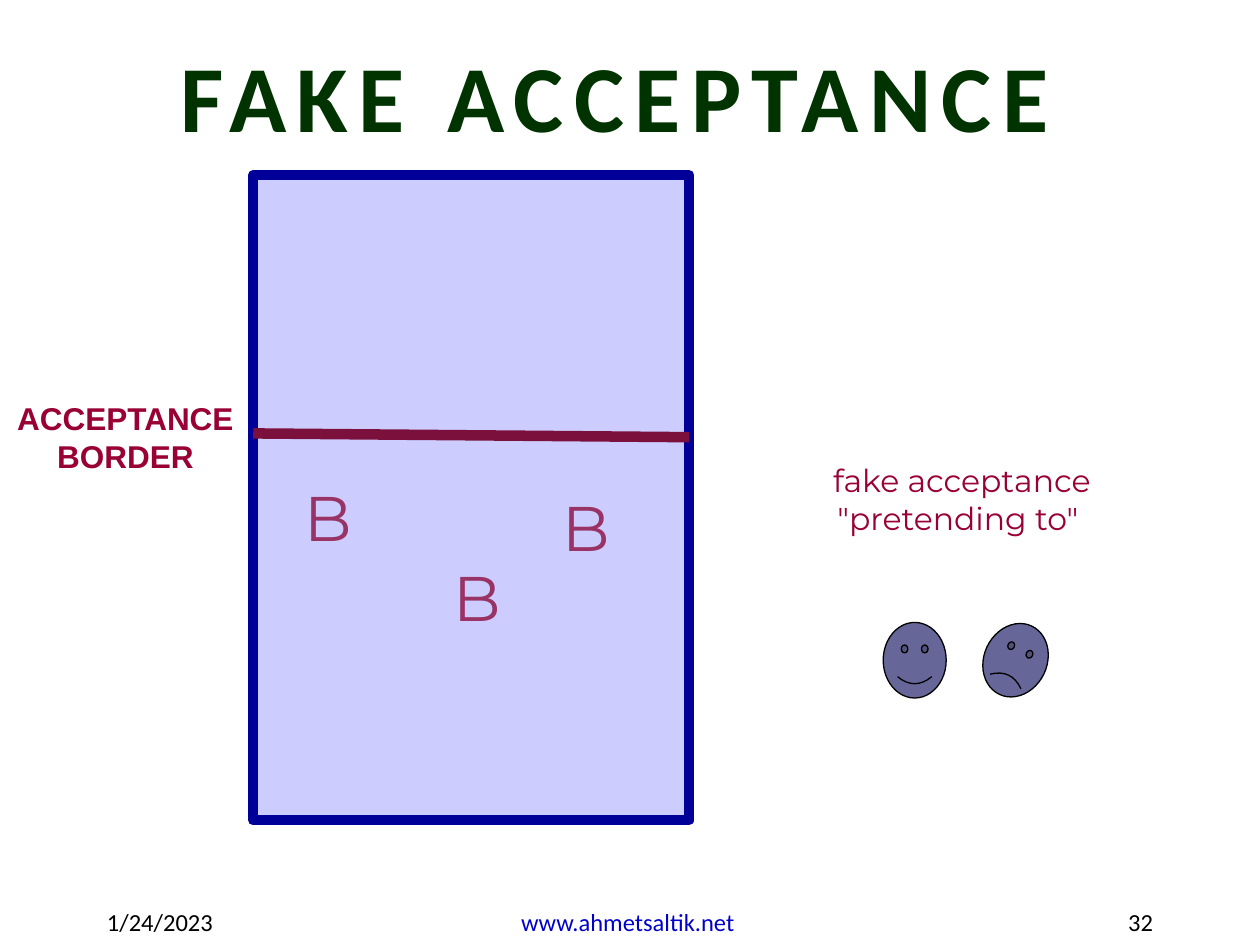
from lxml import etree
from pptx import Presentation
from pptx.dml.color import RGBColor
from pptx.enum.shapes import MSO_CONNECTOR as CONN, MSO_SHAPE as SHAPE
from pptx.enum.text import MSO_ANCHOR as ANCHOR, MSO_AUTO_SIZE as AUTO, PP_ALIGN as ALIGN
from pptx.oxml.ns import qn
from pptx.util import Inches, Pt

COLORS = {
    "title": "003300", "face": "666699", "black": "000000", "accent": "990033",
    "panel": "CCCCFF", "frame": "000099", "border": "7A103B",
    "letter": "993366", "link": "0000CC",
}


def rgb(name):
    return RGBColor.from_string(COLORS[name])


class SlideBuilder:
    def __init__(self, slide):
        self.s = slide

    def add_lines(self, tf, lines, font, size, color, align=ALIGN.CENTER,
                  bold=False, outline=None, spacing=None):
        for i, line in enumerate(lines):
            p = tf.add_paragraph() if i else tf.paragraphs[0]
            p.alignment = align
            r = p.add_run()
            r.text = line
            r.font.name, r.font.size, r.font.bold = font, Pt(size), bold
            r.font.color.rgb = rgb(color)
            rpr = r._r.get_or_add_rPr()
            if spacing:
                rpr.set("spc", str(spacing * 100))
            if outline:
                ln = etree.Element(qn("a:ln"), w=str(Pt(0.75)))
                fill = etree.SubElement(ln, qn("a:solidFill"))
                etree.SubElement(fill, qn("a:srgbClr"), val=COLORS[outline])
                rpr.insert(0, ln)

    def title(self, text, x, y, w, h):
        sp = self.s.shapes.title
        sp.left, sp.top, sp.width, sp.height = map(Inches, (x, y, w, h))
        tf = sp.text_frame
        tf.auto_size, tf.vertical_anchor = AUTO.NONE, ANCHOR.BOTTOM
        tf.margin_left = tf.margin_right = tf.margin_bottom = 0
        self.add_lines(tf, [text], "Calibri", 54, "title", bold=True, spacing=6)

    def text(self, lines, x, y, w, h, font, size, color, wrap=True, **style):
        sp = self.s.shapes.add_textbox(*map(Inches, (x, y, w, h)))
        sp.text_frame.word_wrap = wrap
        self.add_lines(sp.text_frame, lines, font, size, color, **style)

    def shape(self, kind, x, y, w, h, fill, line, width):
        sp = self.s.shapes.add_shape(kind, *map(Inches, (x, y, w, h)))
        sp.shadow.inherit = False
        sp.fill.solid()
        sp.fill.fore_color.rgb = rgb(fill)
        sp.line.color.rgb = rgb(line)
        sp.line.width = Pt(width)
        return sp

    def face(self, x, mouth, rotation=0):
        sp = self.shape(SHAPE.SMILEY_FACE, x, 4.94, 0.5, 0.6, "face", "black", 0.75)
        sp.adjustments[0] = mouth
        sp.rotation = rotation

    def line(self, x1, y1, x2, y2, color, width):
        cx = self.s.shapes.add_connector(CONN.STRAIGHT, *map(Inches, (x1, y1, x2, y2)))
        cx.line.color.rgb = rgb(color)
        cx.line.width = Pt(width)
        etree.SubElement(cx._element.spPr, qn("a:effectLst"))


def main():
    prs = Presentation()
    prs.slide_width, prs.slide_height = Inches(10), Inches(7.5)
    b = SlideBuilder(prs.slides.add_slide(prs.slide_layouts[5]))
    b.title("FAKE ACCEPTANCE ", 0.75, 0.36, 8.52, 0.84)

    # Happy and sad faces with their caption
    b.face(7.01, 0.047)
    b.face(7.81, -0.047, 25.2)
    b.text(["fake acceptance", "\"pretending to\" "], 6.02, 3.61, 3.23, 1,
           "Montserrat", 18, "accent", wrap=False, outline="accent")

    # Behavior window, divided by the acceptance border
    b.shape(SHAPE.RECTANGLE, 2.01, 1.39, 3.46, 5.12, "panel", "frame", 6)
    b.line(2.01, 3.44, 5.47, 3.47, "border", 6)
    for x, y in ((2.32, 3.75), (4.37, 3.83), (3.5, 4.38)):
        b.text(["B"], x, y, 0.4, 0.47, "Montserrat", 36, "letter",
               wrap=False, outline="black")
    b.text(["ACCEPTANCE BORDER"], 0, 3.12, 1.99, 0.71, "Arial", 18, "accent", bold=True)

    # Footer
    for text, x, w, color, align in (
        ("1/24/2023", 0.75, 2.08, "black", ALIGN.LEFT),
        ("www.ahmetsaltik.net ", 3.42, 3.17, "link", ALIGN.CENTER),
        ("32", 7.17, 2.08, "black", ALIGN.RIGHT),
    ):
        b.text([text], x, 7.15, w, 0.41, "Calibri", 14, color, align=align)

    prs.save("out.pptx")


if __name__ == "__main__":
    main()
